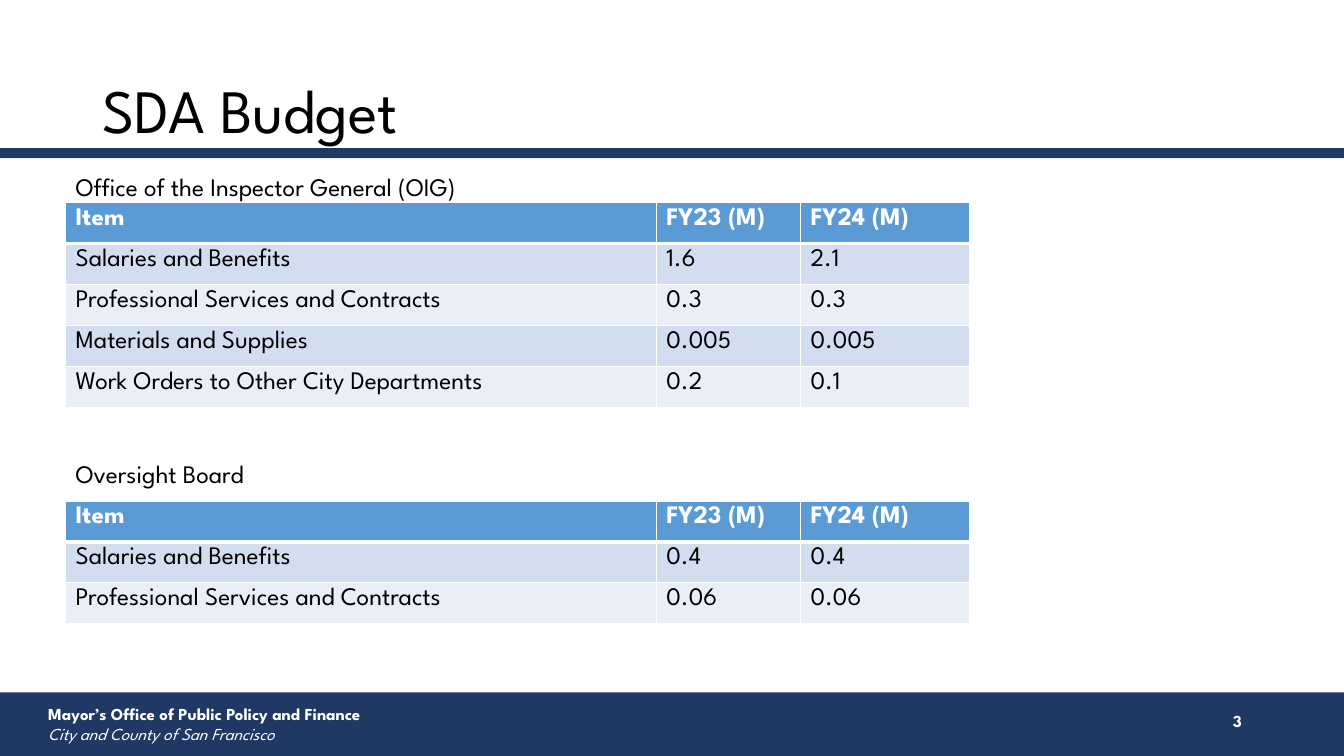
from dataclasses import dataclass

from lxml.etree import SubElement
from pptx import Presentation
from pptx.dml.color import RGBColor
from pptx.enum.shapes import MSO_SHAPE
from pptx.enum.text import MSO_ANCHOR, PP_ALIGN
from pptx.oxml.ns import qn
from pptx.slide import Slide
from pptx.table import _Cell
from pptx.text.text import TextFrame, _Paragraph
from pptx.util import Emu, Inches, Pt

NAVY = RGBColor(0x20, 0x38, 0x64)
BLUE = RGBColor(0x5B, 0x9B, 0xD5)
BAND_DARK = RGBColor(0xD2, 0xDE, 0xEF)
BAND_LIGHT = RGBColor(0xEA, 0xEF, 0xF7)
WHITE = RGBColor(0xFF, 0xFF, 0xFF)
BLACK = RGBColor(0x00, 0x00, 0x00)

FONT = "League Spartan"
SLIDE_WIDTH = Inches(13.333)
SLIDE_HEIGHT = Inches(7.5)

TABLE_LEFT = 4.88
COLUMN_SHARES = (43.95, 10.73, 12.6)
ROW_SHARE = 5.42
TEXT_SHARE = 5.33
HEADER = ("Item", "FY23 (M)", "FY24 (M)")


def across(percent: float) -> Emu:
    return Emu(round(SLIDE_WIDTH * percent / 100))


def down(percent: float) -> Emu:
    return Emu(round(SLIDE_HEIGHT * percent / 100))


@dataclass(frozen=True)
class Area:
    left: float
    top: float
    width: float
    height: float

    def lengths(self) -> tuple[Emu, Emu, Emu, Emu]:
        return across(self.left), down(self.top), across(self.width), down(self.height)


@dataclass(frozen=True)
class Line:
    text: str
    size: int
    color: RGBColor
    bold: bool = False
    italic: bool = False
    align: PP_ALIGN = PP_ALIGN.LEFT
    spacing: float = 1.0


@dataclass(frozen=True)
class TextBlock:
    area: Area
    lines: tuple[Line, ...]
    anchor: MSO_ANCHOR = MSO_ANCHOR.TOP


@dataclass(frozen=True)
class Budget:
    caption: str
    caption_top: float
    table_top: float
    items: tuple[tuple[str, str, str], ...]


BARS = (Area(0, 91.6, 100, 8.4), Area(0, 19.6, 100, 1.33))

TEXT_BLOCKS = (
    TextBlock(
        Area(2.85, 92.4, 63.98, TEXT_SHARE),
        (
            Line("Mayor’s Office of Public Policy and Finance", 12, WHITE, bold=True),
            Line("City and County of San Francisco", 12, WHITE, italic=True),
        ),
    ),
    TextBlock(
        Area(6.88, 5.33, 86.25, 19.33),
        (Line("SDA Budget", 44, BLACK, spacing=0.9),),
        MSO_ANCHOR.MIDDLE,
    ),
    TextBlock(
        Area(70.65, 92.67, 22.5, TEXT_SHARE),
        (Line("3", 12, WHITE, bold=True, align=PP_ALIGN.RIGHT),),
        MSO_ANCHOR.MIDDLE,
    ),
)

BUDGETS = (
    Budget(
        "Office of the Inspector General (OIG)", 22, 26.8,
        (
            ("Salaries and Benefits", "1.6", "2.1"),
            ("Professional Services and Contracts", "0.3", "0.3"),
            ("Materials and Supplies", "0.005", "0.005"),
            ("Work Orders to Other City Departments", "0.2", "0.1"),
        ),
    ),
    Budget(
        "Oversight Board", 60, 66.27,
        (
            ("Salaries and Benefits", "0.4", "0.4"),
            ("Professional Services and Contracts", "0.06", "0.06"),
        ),
    ),
)


def write_line(paragraph: _Paragraph, line: Line) -> None:
    paragraph.text = line.text
    paragraph.alignment = line.align
    paragraph.line_spacing = line.spacing
    font = paragraph.font
    font.name = FONT
    font.size = Pt(line.size)
    font.bold = line.bold
    font.italic = line.italic
    font.color.rgb = line.color


def write_lines(frame: TextFrame, lines: tuple[Line, ...]) -> None:
    for index, line in enumerate(lines):
        write_line(frame.add_paragraph() if index else frame.paragraphs[0], line)


def add_bar(slide: Slide, area: Area) -> None:
    shape = slide.shapes.add_shape(MSO_SHAPE.RECTANGLE, *area.lengths())
    shape.shadow.inherit = False
    shape.fill.solid()
    shape.fill.fore_color.rgb = NAVY
    shape.line.fill.background()


def add_text(slide: Slide, block: TextBlock) -> None:
    frame = slide.shapes.add_textbox(*block.area.lengths()).text_frame
    frame.word_wrap = True
    frame.vertical_anchor = block.anchor
    write_lines(frame, block.lines)


def set_borders(cell: _Cell, row: int) -> None:
    properties = cell._tc.get_or_add_tcPr()
    widths = {"L": 1, "R": 1, "T": 3 if row == 1 else 1, "B": 3 if row == 0 else 1}
    for side, width in widths.items():
        border = SubElement(properties, qn(f"a:ln{side}"), w=str(Pt(width)))
        fill = SubElement(border, qn("a:solidFill"))
        SubElement(fill, qn("a:srgbClr"), val=str(WHITE))


def add_budget(slide: Slide, budget: Budget) -> None:
    rows = (HEADER, *budget.items)
    width = sum(COLUMN_SHARES)
    area = Area(TABLE_LEFT, budget.table_top, width, ROW_SHARE * len(rows))
    table = slide.shapes.add_table(len(rows), len(HEADER), *area.lengths()).table
    for column, share in zip(table.columns, COLUMN_SHARES):
        column.width = across(share)
    for row_index, values in enumerate(rows):
        table.rows[row_index].height = down(ROW_SHARE)
        is_header = row_index == 0
        band = BAND_DARK if row_index % 2 else BAND_LIGHT
        for column_index, value in enumerate(values):
            cell = table.cell(row_index, column_index)
            set_borders(cell, row_index)
            cell.fill.solid()
            cell.fill.fore_color.rgb = BLUE if is_header else band
            color = WHITE if is_header else BLACK
            write_lines(cell.text_frame, (Line(value, 18, color, bold=is_header),))
    caption_area = Area(TABLE_LEFT, budget.caption_top, width, TEXT_SHARE)
    add_text(slide, TextBlock(caption_area, (Line(budget.caption, 18, BLACK),)))


def main() -> None:
    presentation = Presentation()
    presentation.slide_width = SLIDE_WIDTH
    presentation.slide_height = SLIDE_HEIGHT
    slide = presentation.slides.add_slide(presentation.slide_layouts[6])
    for bar in BARS:
        add_bar(slide, bar)
    for block in TEXT_BLOCKS:
        add_text(slide, block)
    for budget in BUDGETS:
        add_budget(slide, budget)
    presentation.save("out.pptx")


if __name__ == "__main__":
    main()
